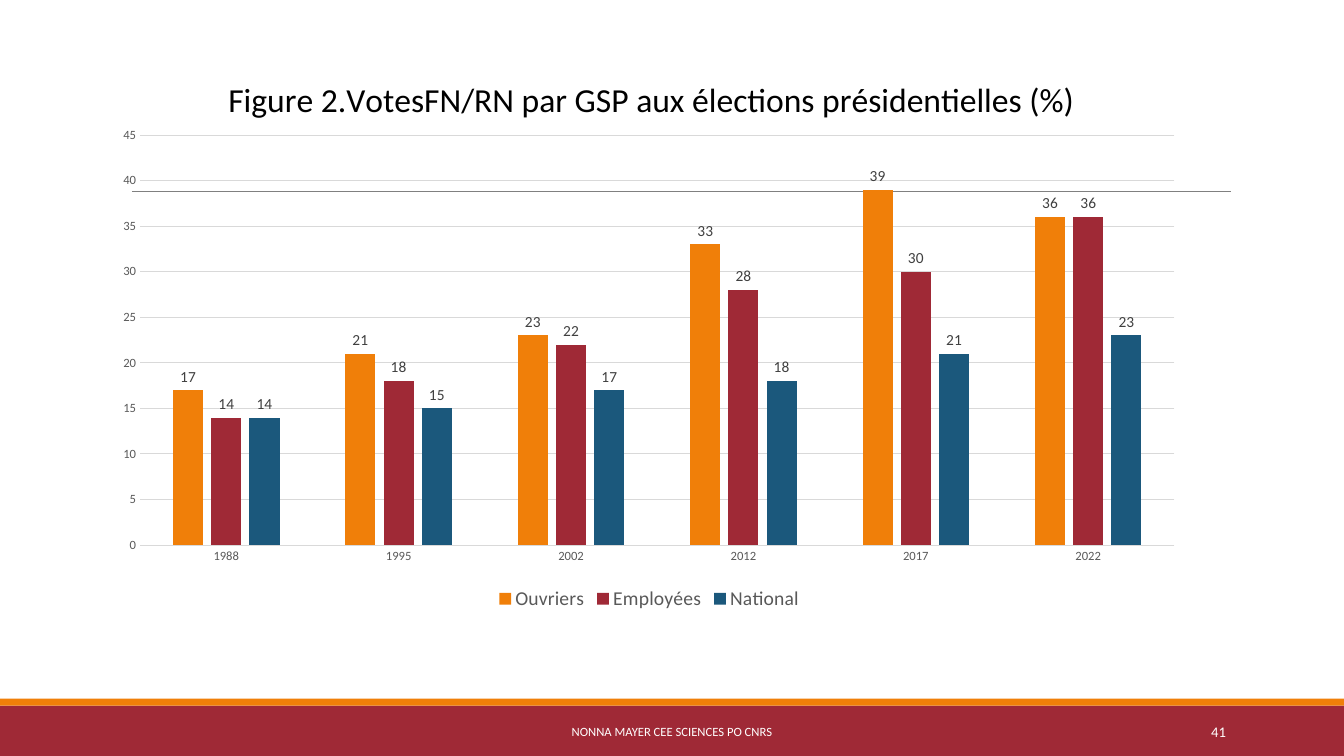
"""Build a slide charting the FN/RN presidential vote by occupation."""
from lxml import etree
from pptx import Presentation
from pptx.chart.data import CategoryChartData
from pptx.dml.color import RGBColor
from pptx.enum.chart import XL_CHART_TYPE, XL_LABEL_POSITION, XL_LEGEND_POSITION, XL_TICK_MARK
from pptx.enum.shapes import MSO_CONNECTOR, MSO_SHAPE
from pptx.enum.text import MSO_ANCHOR, PP_ALIGN
from pptx.oxml.ns import qn
from pptx.util import Pt

COLUMNS = XL_CHART_TYPE.COLUMN_CLUSTERED
LABEL_ABOVE = XL_LABEL_POSITION.OUTSIDE_END
LEGEND_BELOW = XL_LEGEND_POSITION.BOTTOM
NO_TICK = XL_TICK_MARK.NONE
STRAIGHT = MSO_CONNECTOR.STRAIGHT
RECTANGLE = MSO_SHAPE.RECTANGLE
MIDDLE = MSO_ANCHOR.MIDDLE
CENTER, RIGHT = PP_ALIGN.CENTER, PP_ALIGN.RIGHT

FONT = "Calibri"
COLORS = {
    "orange": "F07F09", "red": "9F2936", "blue": "1B587C", "white": "FFFFFF",
    "black": "000000", "rule": "808080", "grid": "D9D9D9",
    "axis": "595959", "label": "404040",
}
TITLE = "Figure 2.VotesFN/RN par GSP aux élections présidentielles (%)"
YEARS = ["1988", "1995", "2002", "2012", "2017", "2022"]
SERIES = [
    ("Ouvriers", "orange", [17, 21, 23, 33, 39, 36]),
    ("Employées", "red", [14, 18, 22, 28, 30, 36]),
    ("National", "blue", [14, 15, 17, 18, 21, 23]),
]
BANDS = [("red", 504, 36), ("orange", 499, 5)]
FOOTERS = [
    ("NONNA MAYER CEE SCIENCES PO CNRS", 290.2, 379.4, 9, CENTER),
    ("41", 779.8, 103, 10.5, RIGHT),
]
SLIDE_SIZE = (960, 540)
RULE = (94.3, 136.8, 879.1, 136.8)
FOOTER_TOP, FOOTER_HEIGHT = 508.3, 28.8
CHART_BOX = (72.7, 34.6, 781.9, 404.6)
TITLE_LAYOUT = {"xMode": "edge", "yMode": "edge", "x": 0.11, "y": 0.04}
PLOT_LAYOUT = {"layoutTarget": "inner", "xMode": "edge", "yMode": "edge",
               "x": 0.035, "y": 0.153, "w": 0.945, "h": 0.724}


def color(name):
    return RGBColor.from_string(COLORS[name])


def style(font, size, name):
    font.name, font.size, font.bold = FONT, Pt(size), False
    font.color.rgb = color(name)


def stroke(line, name, width):
    line.color.rgb = color(name)
    line.width = Pt(width)


def place(parent, position, settings):
    for old in parent.findall(qn("c:layout")):
        parent.remove(old)
    layout = etree.Element(qn("c:layout"))
    manual = etree.SubElement(layout, qn("c:manualLayout"))
    for tag, value in settings.items():
        etree.SubElement(manual, qn(f"c:{tag}"), val=str(value))
    parent.insert(position, layout)


def clear_background():
    properties = etree.Element(qn("c:spPr"))
    etree.SubElement(properties, qn("a:noFill"))
    outline = etree.SubElement(properties, qn("a:ln"))
    etree.SubElement(outline, qn("a:noFill"))
    return properties


def add_frame(page):
    for name, top, height in BANDS:
        band = page.shapes.add_shape(RECTANGLE, 0, Pt(top), Pt(SLIDE_SIZE[0]), Pt(height))
        band.shadow.inherit = False
        band.fill.solid()
        band.fill.fore_color.rgb = color(name)
        band.line.fill.background()
    rule = page.shapes.add_connector(STRAIGHT, *map(Pt, RULE))
    stroke(rule.line, "rule", 0.5)
    etree.SubElement(rule.element.find(qn("p:spPr")), qn("a:effectLst"))
    for text, left, width, size, alignment in FOOTERS:
        box = page.shapes.add_textbox(Pt(left), Pt(FOOTER_TOP), Pt(width), Pt(FOOTER_HEIGHT))
        frame = box.text_frame
        frame.word_wrap = True
        frame.vertical_anchor = MIDDLE
        para = frame.paragraphs[0]
        para.text, para.alignment = text, alignment
        style(para.font, size, "white")


def add_vote_chart(page):
    data = CategoryChartData()
    data.categories = YEARS
    for name, _, values in SERIES:
        data.add_series(name, values)
    chart = page.shapes.add_chart(COLUMNS, *map(Pt, CHART_BOX), data).chart
    style(chart.font, 10, "black")

    chart.has_title = True
    para = chart.chart_title.text_frame.paragraphs[0]
    para.text = TITLE
    style(para.font, 24, "black")
    place(para._p.getparent().getparent().getparent(), 1, TITLE_LAYOUT)

    chart.has_legend = True
    chart.legend.position = LEGEND_BELOW
    chart.legend.include_in_layout = False
    style(chart.legend.font, 14, "axis")

    for axis in (chart.category_axis, chart.value_axis):
        axis.major_tick_mark = axis.minor_tick_mark = NO_TICK
        style(axis.tick_labels.font, 9, "axis")
    stroke(chart.category_axis.format.line, "grid", 0.75)
    votes = chart.value_axis
    votes.minimum_scale, votes.maximum_scale, votes.major_unit = 0, 45, 5
    votes.format.line.fill.background()
    votes.has_major_gridlines = True
    stroke(votes.major_gridlines.format.line, "grid", 0.75)

    plot = chart.plots[0]
    plot.gap_width, plot.overlap = 219, -27
    plot.vary_by_categories = False
    for series, (_, name, _) in zip(plot.series, SERIES):
        series.format.fill.solid()
        series.format.fill.fore_color.rgb = color(name)
        labels = series.data_labels
        labels.show_value = True
        labels.position = LABEL_ABOVE
        style(labels.font, 11, "label")

    body = chart.element.find(qn("c:chart"))
    area = body.find(qn("c:plotArea"))
    place(area, 0, PLOT_LAYOUT)
    area.append(clear_background())
    body.addnext(clear_background())


def main():
    deck = Presentation()
    deck.slide_width, deck.slide_height = map(Pt, SLIDE_SIZE)
    page = deck.slides.add_slide(deck.slide_layouts[6])
    add_frame(page)
    add_vote_chart(page)
    deck.save("out.pptx")


if __name__ == "__main__":
    main()
